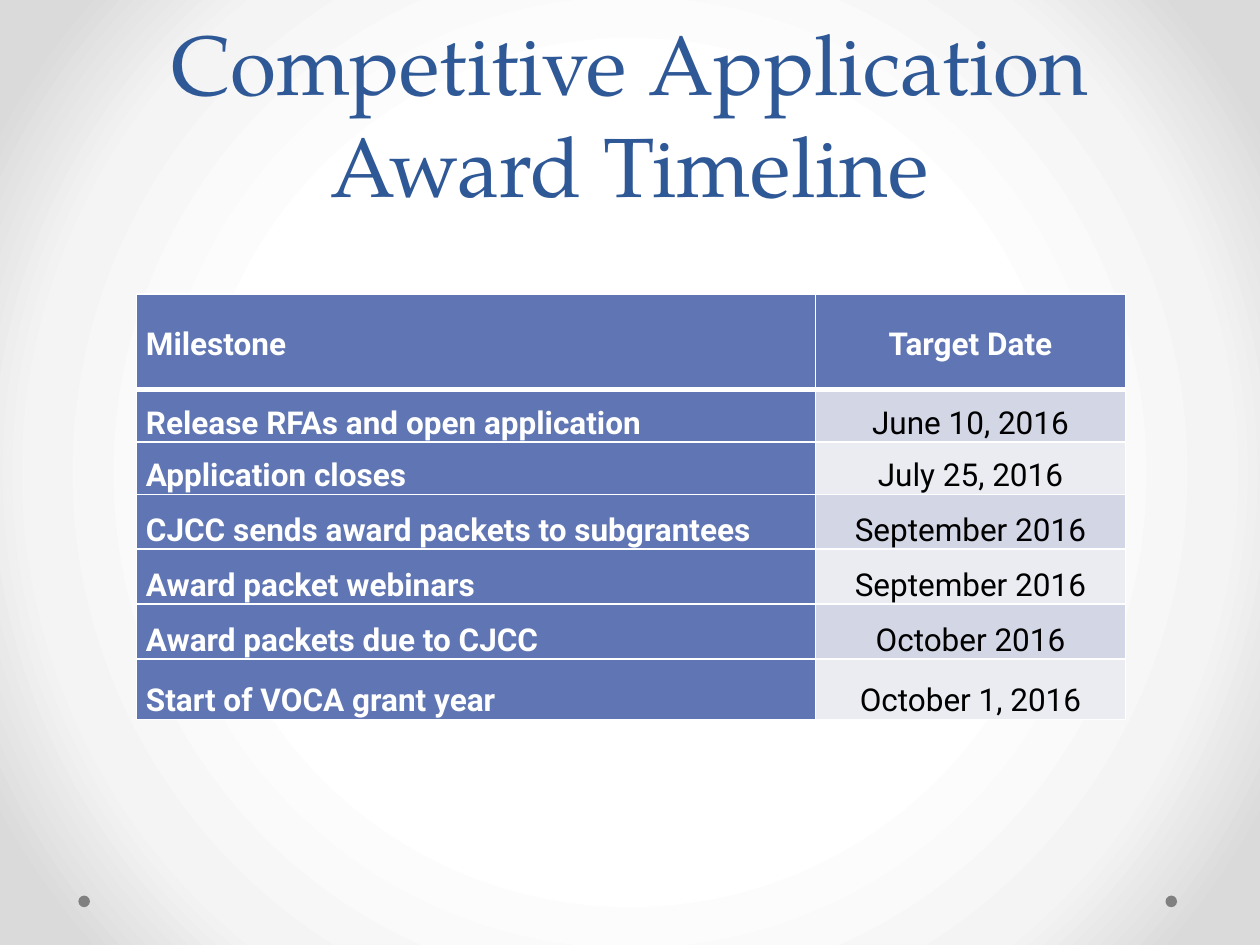
from pptx import Presentation
from pptx.dml.color import RGBColor
from pptx.enum import shapes, text
from pptx.oxml import parse_xml
from pptx.oxml import ns
from pptx.util import Pt

COLORS = {
    "title": "2F5897", "header": "6076B4", "band_dark": "D2D6E5",
    "band_light": "EAECF2", "white": "FFFFFF", "black": "000000",
    "dot": "808080",
}
BACKDROP = [(50, "FFFFFF"), (76, "F4F4F4"), (92, "DADADA")]
TITLE_FONT, BODY_FONT = "TeX Gyre Pagella", "Roboto"

MILESTONES = [
    ("Milestone", "Target Date"),
    ("Release RFAs and open application", "June 10, 2016"),
    ("Application closes", "July 25, 2016"),
    ("CJCC sends award packets to subgrantees", "September 2016"),
    ("Award packet webinars", "September 2016"),
    ("Award packets due to CJCC", "October 2016"),
    ("Start of VOCA grant year", "October 1, 2016"),
]
COLUMN_WIDTHS = [388, 177.2]
ROW_HEIGHTS = [54.7, 30, 30, 31, 31.5, 31.5, 34.6]


def rgb(name):
    return RGBColor.from_string(COLORS[name])


def add_run(paragraph, words, font, size, color, bold=False):
    run = paragraph.add_run()
    run.text = words
    run.font.name = font
    run.font.size = Pt(size)
    run.font.bold = bold
    run.font.color.rgb = rgb(color)


def paint_background(slide):
    """Radial gradient, white in the centre and grey at the corners."""
    slide.background.fill.solid()
    solid = slide.element.find(".//" + ns.qn("p:bgPr")).find(ns.qn("a:solidFill"))
    stops = "".join(
        f'<a:gs pos="{pos * 1000}"><a:srgbClr val="{color}"/></a:gs>'
        for pos, color in BACKDROP)
    gradient = parse_xml(
        f'<a:gradFill {ns.nsdecls("a")} rotWithShape="1"><a:gsLst>{stops}</a:gsLst>'
        '<a:path path="circle"><a:fillToRect l="50000" t="50000" r="50000" b="50000"/>'
        '</a:path></a:gradFill>')
    solid.getparent().replace(solid, gradient)


def add_footer_dots(slide, lefts, top, size):
    for left in lefts:
        dot = slide.shapes.add_shape(
            shapes.MSO_SHAPE.OVAL, Pt(left), Pt(top), Pt(size), Pt(size))
        dot.shadow.inherit = False
        dot.fill.solid()
        dot.fill.fore_color.rgb = rgb("dot")
        dot.line.fill.background()


def place_title(slide, left, top, width, height):
    title = slide.shapes.title
    title.left, title.top = Pt(left), Pt(top)
    title.width, title.height = Pt(width), Pt(height)
    frame = title.text_frame
    frame.auto_size = text.MSO_AUTO_SIZE.NONE
    frame.word_wrap = True
    frame.vertical_anchor = text.MSO_ANCHOR.BOTTOM
    heading = frame.paragraphs[0]
    heading.alignment = text.PP_ALIGN.CENTER
    heading.line_spacing = Pt(58)
    add_run(heading, "Competitive Application Award Timeline", TITLE_FONT, 48, "title")


def set_borders(cell, **widths):
    """White borders; widths in points by side, in the order L, R, T, B."""
    properties = cell._tc.get_or_add_tcPr()
    for side, width in widths.items():
        properties.append(parse_xml(
            f'<a:ln{side} {ns.nsdecls("a")} w="{int(Pt(width))}"><a:solidFill>'
            f'<a:srgbClr val="{COLORS["white"]}"/></a:solidFill></a:ln{side}>'))


def fill_cell(cell, words, row, column):
    is_header, is_date = row == 0, column == 1
    is_plain = is_date and not is_header
    set_borders(cell, L=1, R=1, T=3 if row == 1 else 1, B=3 if is_header else 1)
    band = "band_dark" if row % 2 else "band_light"
    cell.fill.solid()
    cell.fill.fore_color.rgb = rgb(band if is_plain else "header")
    cell.margin_left = cell.margin_right = Pt(5.4)
    cell.margin_top = cell.margin_bottom = 0
    cell.vertical_anchor = (
        text.MSO_ANCHOR.MIDDLE if is_header else text.MSO_ANCHOR.BOTTOM)
    entry = cell.text_frame.paragraphs[0]
    entry.alignment = text.PP_ALIGN.CENTER if is_date else text.PP_ALIGN.LEFT
    entry.line_spacing = 1.15
    add_run(entry, words, BODY_FONT, 18,
            "black" if is_plain else "white", bold=not is_plain)


def add_timeline(slide, left, top, width, height):
    timeline = slide.shapes.add_table(
        len(MILESTONES), len(COLUMN_WIDTHS),
        Pt(left), Pt(top), Pt(width), Pt(height)).table
    for column, column_width in zip(timeline.columns, COLUMN_WIDTHS):
        column.width = Pt(column_width)
    for row, row_height in zip(timeline.rows, ROW_HEIGHTS):
        row.height = Pt(row_height)
    for row, entries in enumerate(MILESTONES):
        for column, words in enumerate(entries):
            fill_cell(timeline.cell(row, column), words, row, column)


def main():
    deck = Presentation()
    deck.slide_width, deck.slide_height = Pt(720), Pt(540)
    slide = deck.slides.add_slide(deck.slide_layouts[5])

    # Backdrop
    paint_background(slide)
    add_footer_dots(slide, lefts=(666, 44.8), top=511.8, size=6.6)

    # Title and table
    place_title(slide, 36, 0, 648, 126)
    add_timeline(slide, 78, 168, sum(COLUMN_WIDTHS), sum(ROW_HEIGHTS))

    deck.save("out.pptx")


if __name__ == "__main__":
    main()
